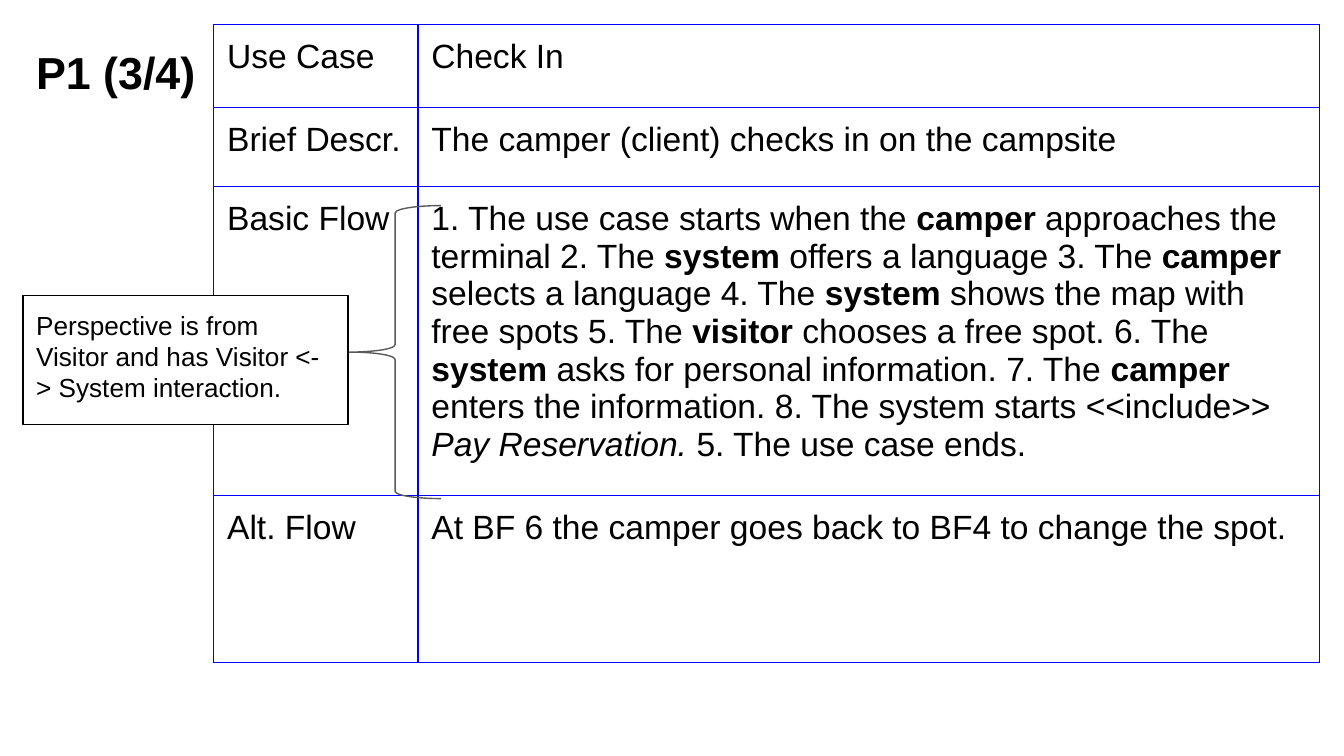
from lxml.etree import SubElement
from pptx import Presentation
from pptx.dml.color import RGBColor
from pptx.enum.shapes import MSO_SHAPE
from pptx.enum.text import MSO_ANCHOR, PP_ALIGN
from pptx.oxml.ns import qn
from pptx.util import Inches, Pt

HUES = {"ink": "000000", "paper": "FFFFFF", "grid": "0000FF", "brace": "595959"}
UNIT = Inches(0.1)  # square grid: 100 columns across the slide
INSET = {f"margin_{side}": UNIT for side in ("left", "right", "top", "bottom")}
BOX = INSET | {"word_wrap": True, "vertical_anchor": MSO_ANCHOR.TOP}


def span(*cells):
    """Turn grid counts into lengths."""
    return [round(n * UNIT) for n in cells]


def write(frame, text, size, bold=False):
    """Fill a frame; *word* is bold and _word_ is italic."""
    para = frame.paragraphs[0]
    para.alignment = PP_ALIGN.LEFT
    para.line_spacing = 1.0
    for i, chunk in enumerate(text.split("*")):
        for j, part in enumerate(chunk.split("_")):
            if not part:
                continue
            run = para.add_run()
            run.text = part
            look = {"name": "Arial", "size": Pt(size),
                    "bold": bold or i % 2 == 1, "italic": j % 2 == 1}
            for key, val in look.items():
                setattr(run.font, key, val)
            run.font.color.rgb = RGBColor.from_string(HUES["ink"])


deck = Presentation()
deck.slide_width, deck.slide_height = span(100, 56.25)
slide = deck.slides.add_slide(deck.slide_layouts[6])
shapes = slide.shapes

# Title
title = shapes.add_textbox(*span(1.7, 2.3, 17.6, 7.6))
write(title.text_frame, "P1 (3/4)", 24, bold=True)

# Use case table
flow = (
    "1. The use case starts when the *camper* approaches the terminal "
    "2. The *system* offers a language 3. The *camper* selects a language "
    "4. The *system* shows the map with free spots "
    "5. The *visitor* chooses a free spot. "
    "6. The *system* asks for personal information. "
    "7. The *camper* enters the information. "
    "8. The system starts <<include>> _Pay Reservation._ 5. The use case ends."
)
rows = [
    (6.2, "Use Case", "Check In"),
    (5.9, "Brief Descr.", "The camper (client) checks in on the campsite"),
    (21.4, "Basic Flow", flow),
    (12.4, "Alt. Flow", "At BF 6 the camper goes back to BF4 to change the spot."),
]
cols = (15.2, 67.1)
holder = shapes.add_table(len(rows), len(cols), *span(15.9, 1.8, 32.8, 32.8))
table = holder.table
table.first_row = table.horz_banding = False
for col, wide in zip(table.columns, span(*cols)):
    col.width = wide
for r, (tall, *texts) in enumerate(rows):
    table.rows[r].height = span(tall)[0]
    for c, text in enumerate(texts):
        cell = table.cell(r, c)
        for key, val in INSET.items():
            setattr(cell, key, val)
        write(cell.text_frame, text, 18)
        props = cell._tc.get_or_add_tcPr()
        for edge in ("lnL", "lnR", "lnT", "lnB"):
            line = SubElement(props, qn(f"a:{edge}"), w=str(Pt(0.75)))
            fill = SubElement(line, qn("a:solidFill"))
            SubElement(fill, qn("a:srgbClr"), val=HUES["grid"])
        cell.fill.background()
holder.width, holder.height = span(32.8, 32.8)

# Note and the brace that ties it to the basic flow
note = shapes.add_shape(MSO_SHAPE.RECTANGLE, *span(1.7, 22, 24.2, 9.6))
note.fill.solid()
note.fill.fore_color.rgb = RGBColor.from_string(HUES["paper"])
write(note.text_frame,
      "Perspective is from Visitor and has Visitor <-> System interaction.", 14)
for box in (title, note):
    for key, val in BOX.items():
        setattr(box.text_frame, key, val)
brace = shapes.add_shape(MSO_SHAPE.LEFT_BRACE, *span(26, 15.3, 6.8, 21.8))
brace.fill.background()
brace.adjustments[0], brace.adjustments[1] = 0.08, 0.5
for shape, hue in ((note, "ink"), (brace, "brace")):
    shape.shadow.inherit = False
    shape.line.width = Pt(0.75)
    shape.line.color.rgb = RGBColor.from_string(HUES[hue])

deck.save("out.pptx")
